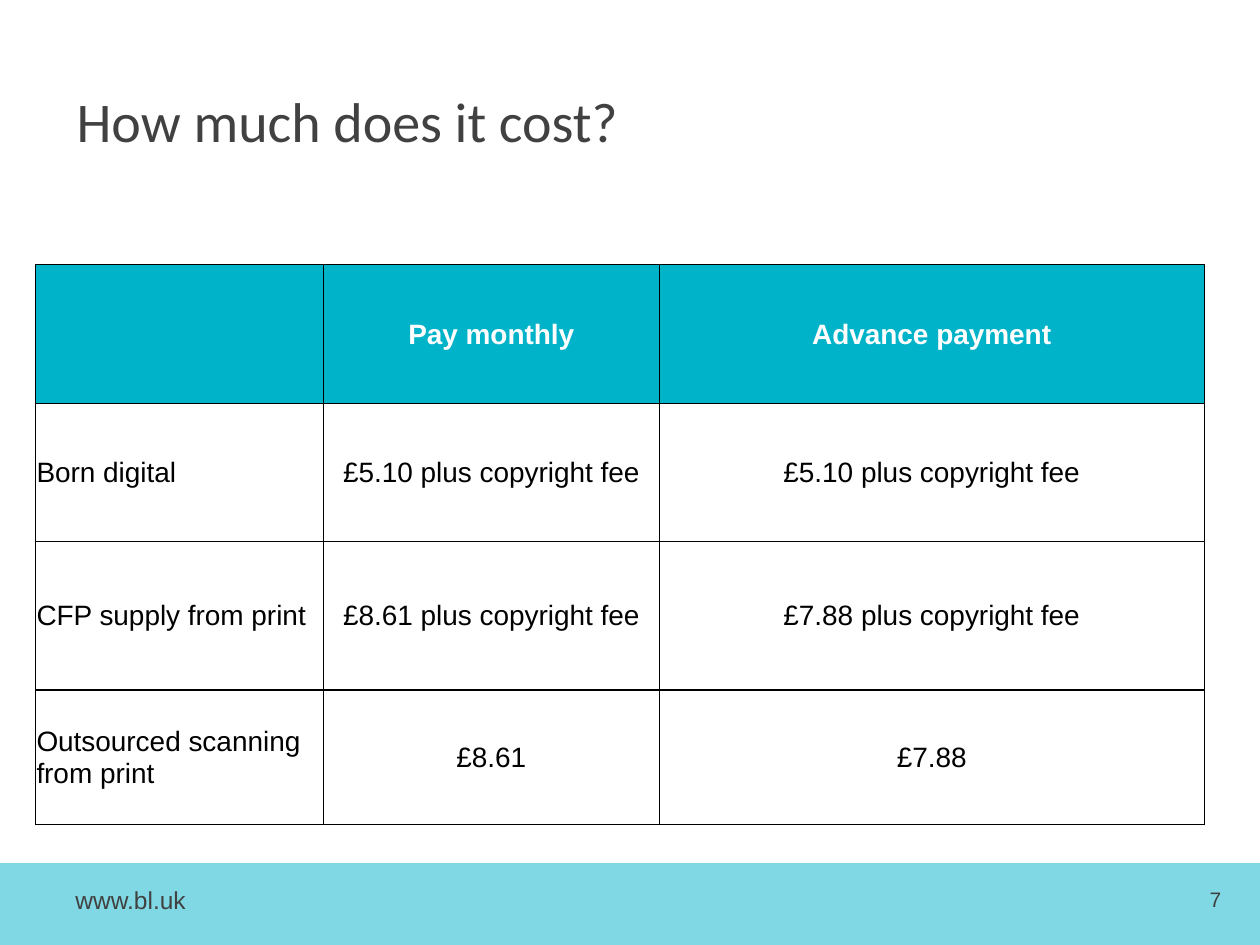
from lxml import etree
from pptx import Presentation
from pptx.dml.color import RGBColor
from pptx.enum import shapes, text
from pptx.oxml import ns
from pptx.util import Inches, Pt

TEAL = RGBColor(0x00, 0xB3, 0xC9)
GREY = RGBColor(0x41, 0x41, 0x41)
BLACK = RGBColor(0, 0, 0)
WHITE = RGBColor(0xFF, 0xFF, 0xFF)


def add_text(s, words, box, size, font, anchor, align):
    sp = s.shapes.add_textbox(*[Inches(v) for v in box])
    tf = sp.text_frame
    tf.word_wrap = True
    tf.vertical_anchor = anchor
    tf.text = words
    p = tf.paragraphs[0]
    p.alignment = align
    p.font.size, p.font.name, p.font.color.rgb = Pt(size), font, GREY


def add_borders(cell):
    tcPr = cell._tc.get_or_add_tcPr()
    for side in ("a:lnL", "a:lnR", "a:lnT", "a:lnB"):
        ln = etree.SubElement(tcPr, ns.qn(side), w=str(Pt(0.5)))
        fill = etree.SubElement(ln, ns.qn("a:solidFill"))
        etree.SubElement(fill, ns.qn("a:srgbClr"), val=str(BLACK))


prs = Presentation()
prs.slide_width, prs.slide_height = Inches(10), Inches(7.5)
s = prs.slides.add_slide(prs.slide_layouts[6])
LEFT, CENTER, RIGHT = text.PP_ALIGN.LEFT, text.PP_ALIGN.CENTER, text.PP_ALIGN.RIGHT
MIDDLE, BOTTOM = text.MSO_ANCHOR.MIDDLE, text.MSO_ANCHOR.BOTTOM

# Half-transparent footer band
band = s.shapes.add_shape(shapes.MSO_SHAPE.RECTANGLE, 0, Inches(6.85), Inches(10), Inches(0.65))
band.shadow.inherit = False
band.fill.solid()
band.fill.fore_color.rgb = TEAL
band.line.fill.background()
color = band._element.spPr.find(".//" + ns.qn("a:srgbClr"))
etree.SubElement(color, ns.qn("a:alpha"), val="50000")

# Footer texts and title
add_text(s, "www.bl.uk", (0.5, 6.94, 1.4, 0.4), 14, "Arial", MIDDLE, LEFT)
add_text(s, "7", (8.62, 6.94, 1.17, 0.4), 12, "Arial", MIDDLE, RIGHT)
add_text(s, "How much does it cost?", (0.51, 0.6, 8.77, 0.67), 32, "Calibri", BOTTOM, LEFT)

# Price list: one single-row table per line, stacked
widths = (2.29, 2.66, 4.33)
price_rows = [
    (2.1, 1.1, ("", "Pay monthly", "Advance payment")),
    (3.2, 1.1, ("Born digital", "£5.10 plus copyright fee", "£5.10 plus copyright fee")),
    (4.3, 1.17, ("CFP supply from print", "£8.61 plus copyright fee", "£7.88 plus copyright fee")),
    (5.48, 1.06, ("Outsourced scanning from print", "£8.61", "£7.88")),
]
for i, (top, height, words) in enumerate(price_rows):
    header = i == 0
    table = s.shapes.add_table(1, 3, Inches(0.28), Inches(top), Inches(sum(widths)), Inches(height)).table
    table.first_row = header
    table.horz_banding = False
    for j, width in enumerate(widths):
        table.columns[j].width = Inches(width)
        cell = table.cell(0, j)
        add_borders(cell)
        if header:
            cell.fill.solid()
            cell.fill.fore_color.rgb = TEAL
        else:
            cell.fill.background()
        cell.vertical_anchor = MIDDLE
        cell.margin_left = cell.margin_right = cell.margin_top = Inches(0.01)
        cell.margin_bottom = 0
        cell.text_frame.text = words[j]
        p = cell.text_frame.paragraphs[0]
        p.alignment = CENTER if j else LEFT
        p.font.size, p.font.name, p.font.bold = Pt(16), "Arial", header
        p.font.color.rgb = WHITE if header else BLACK

prs.save("out.pptx")
